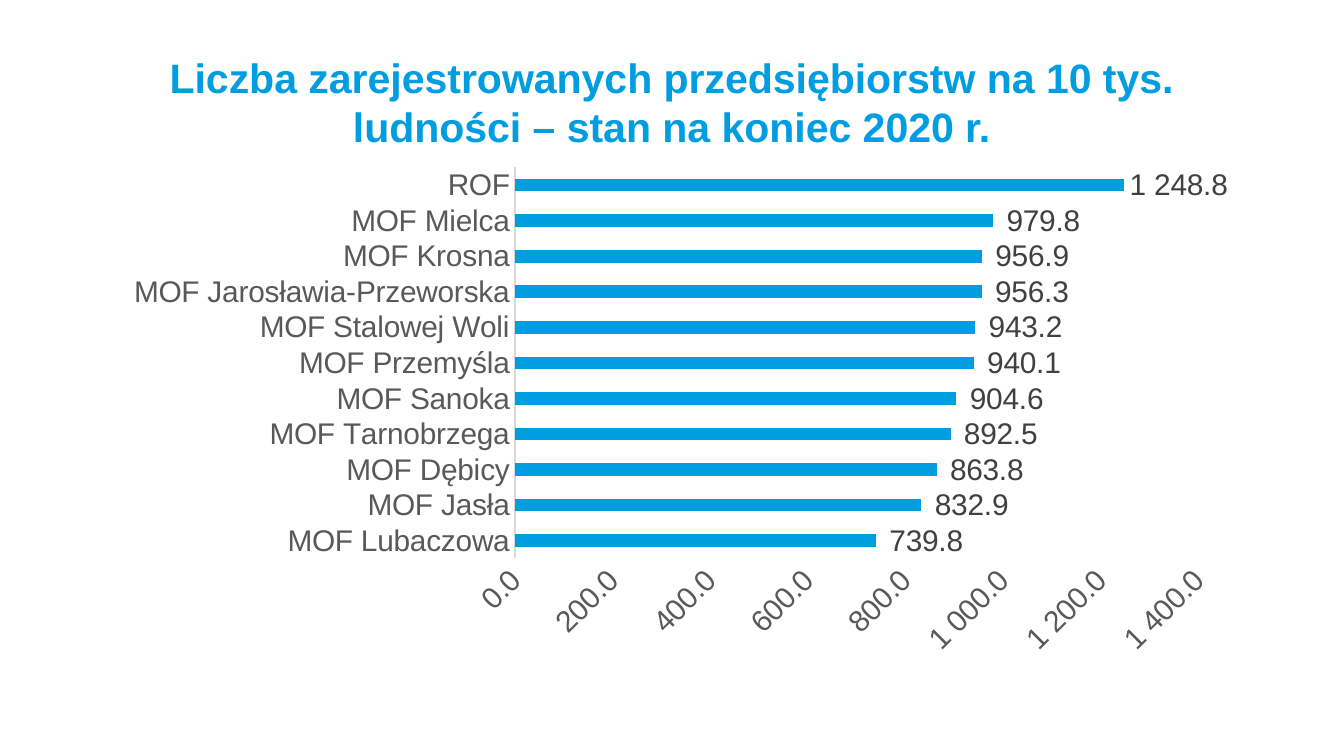
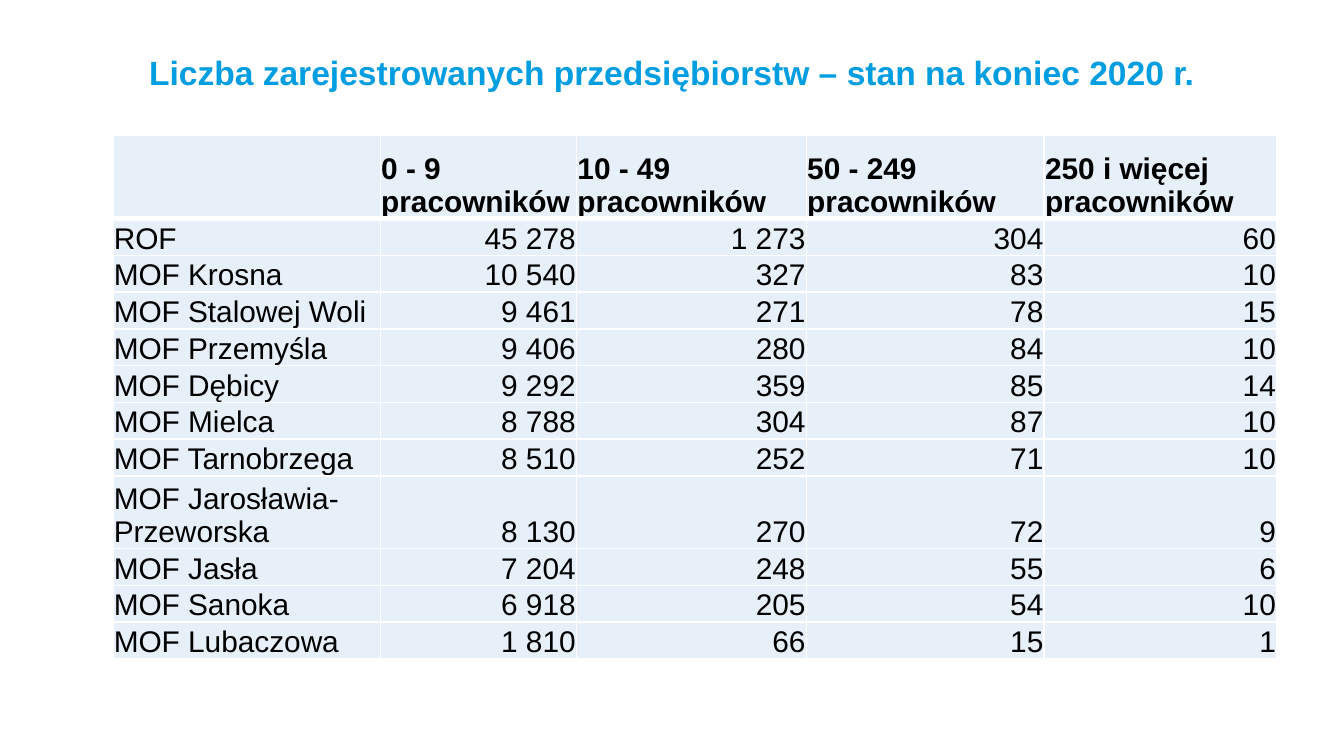
from pptx import Presentation
from pptx import util as u
from pptx.chart.data import CategoryChartData
from pptx.dml.color import RGBColor
from pptx.enum import chart as ch
from pptx.enum import text
from pptx.oxml import parse_xml
from pptx.oxml.ns import nsdecls

WIDTH = u.Inches(10)
HEIGHT = u.Emu(WIDTH * 9 // 16)
FONT = "Arial"
BODY_SIZE = 16
NUMBER_FORMAT = r"#\ ##0.0"
COLORS = {
    "accent": "009DE0",
    "black": "000000",
    "axis_text": "595959",
    "label_text": "404040",
    "axis_line": "D9D9D9",
    "header_fill": "E7F0F9",
    "body_fill": "E7EFF9",
    "border": "FFFFFF",
}
RATES = {
    "MOF Lubaczowa": 739.8,
    "MOF Jasła": 832.9,
    "MOF Dębicy": 863.8,
    "MOF Tarnobrzega": 892.5,
    "MOF Sanoka": 904.6,
    "MOF Przemyśla": 940.1,
    "MOF Stalowej Woli": 943.2,
    "MOF Jarosławia-Przeworska": 956.3,
    "MOF Krosna": 956.9,
    "MOF Mielca": 979.8,
    "ROF": 1248.8,
}
COMPANIES = [
    ("", "0 - 9 pracowników", "10 - 49 pracowników", "50 - 249 pracowników", "250 i więcej pracowników"),
    ("ROF", "45 278", "1 273", "304", "60"),
    ("MOF Krosna", "10 540", "327", "83", "10"),
    ("MOF Stalowej Woli", "9 461", "271", "78", "15"),
    ("MOF Przemyśla", "9 406", "280", "84", "10"),
    ("MOF Dębicy", "9 292", "359", "85", "14"),
    ("MOF Mielca", "8 788", "304", "87", "10"),
    ("MOF Tarnobrzega", "8 510", "252", "71", "10"),
    ("MOF Jarosławia-Przeworska", "8 130", "270", "72", "9"),
    ("MOF Jasła", "7 204", "248", "55", "6"),
    ("MOF Sanoka", "6 918", "205", "54", "10"),
    ("MOF Lubaczowa", "1 810", "66", "15", "1"),
]
COLUMN_WIDTHS = [1.99, 1.46, 1.71, 1.77, 1.73]
HEADER_HEIGHT, LINE_HEIGHT = 0.62, 0.27
TWO_LINE_REGION = "MOF Jarosławia-Przeworska"


def rgb(name):
    return RGBColor.from_string(COLORS[name])


def percent(left, top, width, height):
    sides = (WIDTH, HEIGHT, WIDTH, HEIGHT)
    return [round(side * value / 100) for side, value in zip(sides, (left, top, width, height))]


def style_font(font, color, size=BODY_SIZE, bold=False):
    font.name = FONT
    font.size = u.Pt(size)
    font.bold = bold
    font.color.rgb = rgb(color)


def add_title(page, wording, size):
    box = page.shapes.add_textbox(*percent(8.33, 6.9, 83.33, 15.8))
    frame = box.text_frame
    frame.word_wrap = True
    frame.margin_left = frame.margin_top = frame.margin_right = frame.margin_bottom = 0
    para = frame.paragraphs[0]
    para.text = wording
    para.alignment = text.PP_ALIGN.CENTER
    style_font(para.font, "accent", size, True)


def style_axis(axis):
    axis.has_major_gridlines = False
    axis.major_tick_mark = axis.minor_tick_mark = ch.XL_TICK_MARK.NONE
    style_font(axis.tick_labels.font, "axis_text")


def place_plot(chart, **shares):
    parts = "".join(f'<c:{key} val="{value}"/>' for key, value in shares.items())
    layout = parse_xml(
        f'<c:layout {nsdecls("c")}><c:manualLayout><c:layoutTarget val="inner"/>'
        f'<c:xMode val="edge"/><c:yMode val="edge"/>{parts}</c:manualLayout></c:layout>'
    )
    area = chart._chartSpace.xpath("c:chart/c:plotArea")[0]
    for old in area.xpath("c:layout"):
        area.remove(old)
    area.insert(0, layout)


def add_rate_chart(page):
    data = CategoryChartData()
    data.categories = list(RATES)
    data.add_series("Series 1", list(RATES.values()))
    frame = page.shapes.add_chart(
        ch.XL_CHART_TYPE.BAR_CLUSTERED, *percent(8.33, 20.8, 83.33, 67.2), data
    )
    chart = frame.chart
    chart.has_title = chart.has_legend = False
    style_font(chart.font, "black")

    style_axis(chart.category_axis)
    line = chart.category_axis.format.line
    line.color.rgb = rgb("axis_line")
    line.width = u.Pt(0.75)

    values = chart.value_axis
    style_axis(values)
    values.minimum_scale, values.maximum_scale, values.major_unit = 0, 1400, 200
    values.format.line.fill.background()
    values.tick_labels.number_format = NUMBER_FORMAT
    values.tick_labels.number_format_is_linked = False
    values._element.xpath("c:txPr/a:bodyPr")[0].set("rot", "-2700000")

    plot = chart.plots[0]
    plot.gap_width = 182
    plot.vary_by_categories = False
    bars = plot.series[0]
    bars.format.fill.solid()
    bars.format.fill.fore_color.rgb = rgb("accent")
    labels = bars.data_labels
    labels.show_value = True
    labels.position = ch.XL_LABEL_POSITION.OUTSIDE_END
    labels.number_format = NUMBER_FORMAT
    labels.number_format_is_linked = False
    style_font(labels.font, "label_text")
    place_plot(chart, x=0.36, y=0.02, w=0.61, h=0.77)


def set_borders(cell, top=1, bottom=1):
    properties = cell._tc.get_or_add_tcPr()
    for index, (side, width) in enumerate({"L": 1, "R": 1, "T": top, "B": bottom}.items()):
        properties.insert(index, parse_xml(
            f'<a:ln{side} {nsdecls("a")} w="{u.Pt(width)}"><a:solidFill>'
            f'<a:srgbClr val="{COLORS["border"]}"/></a:solidFill></a:ln{side}>'
        ))


def fill_cell(cell, wording, header, number):
    cell.fill.solid()
    cell.fill.fore_color.rgb = rgb("header_fill" if header else "body_fill")
    cell.margin_left = cell.margin_top = cell.margin_right = u.Pt(0.5)
    cell.margin_bottom = 0
    cell.vertical_anchor = text.MSO_ANCHOR.BOTTOM
    para = cell.text_frame.paragraphs[0]
    para.text = wording
    para.alignment = text.PP_ALIGN.RIGHT if number else text.PP_ALIGN.LEFT
    style_font(para.font, "black", bold=header)


def add_company_table(page):
    frame = page.shapes.add_table(
        len(COMPANIES), len(COLUMN_WIDTHS), *percent(8.4, 17.9, 86.6, 70)
    )
    table = frame.table
    table.horz_banding = False
    for column, width in zip(table.columns, COLUMN_WIDTHS):
        column.width = u.Inches(width)
    for r, record in enumerate(COMPANIES):
        lines = 2 if record[0] == TWO_LINE_REGION else 1
        table.rows[r].height = u.Inches(LINE_HEIGHT * lines if r else HEADER_HEIGHT)
        for c, wording in enumerate(record):
            cell = table.cell(r, c)
            fill_cell(cell, wording, header=r == 0, number=r > 0 and c > 0)
            set_borders(cell, top=3 if r == 1 else 1, bottom=3 if r == 0 else 1)


def main():
    deck = Presentation()
    deck.slide_width, deck.slide_height = WIDTH, HEIGHT
    blank = deck.slide_layouts[6]

    page = deck.slides.add_slide(blank)
    add_title(page, "Liczba zarejestrowanych przedsiębiorstw na 10 tys. ludności – stan na koniec 2020 r.", 22)
    add_rate_chart(page)

    page = deck.slides.add_slide(blank)
    add_title(page, "Liczba zarejestrowanych przedsiębiorstw – stan na koniec 2020 r.", 18)
    add_company_table(page)

    deck.save("out.pptx")


if __name__ == "__main__":
    main()
